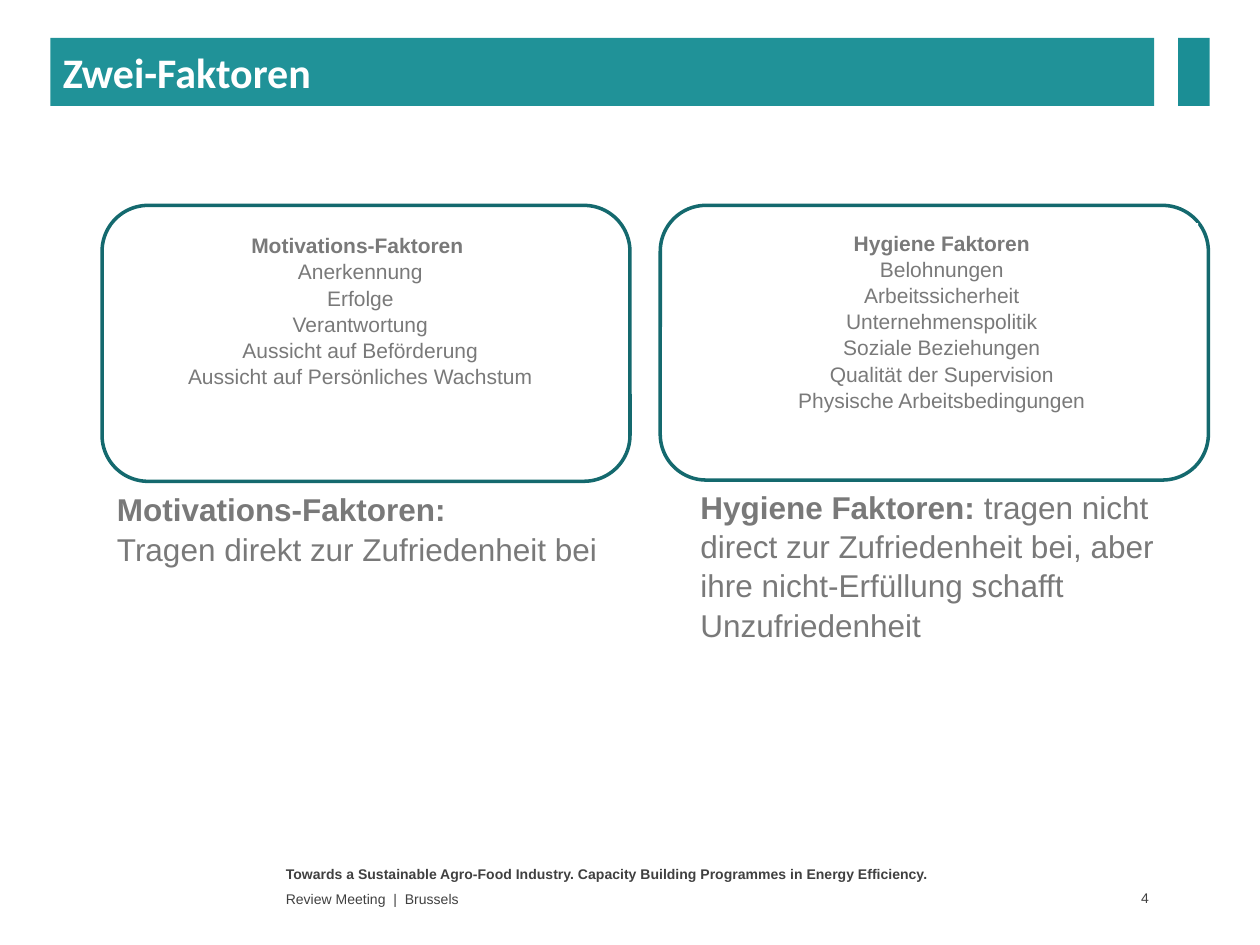
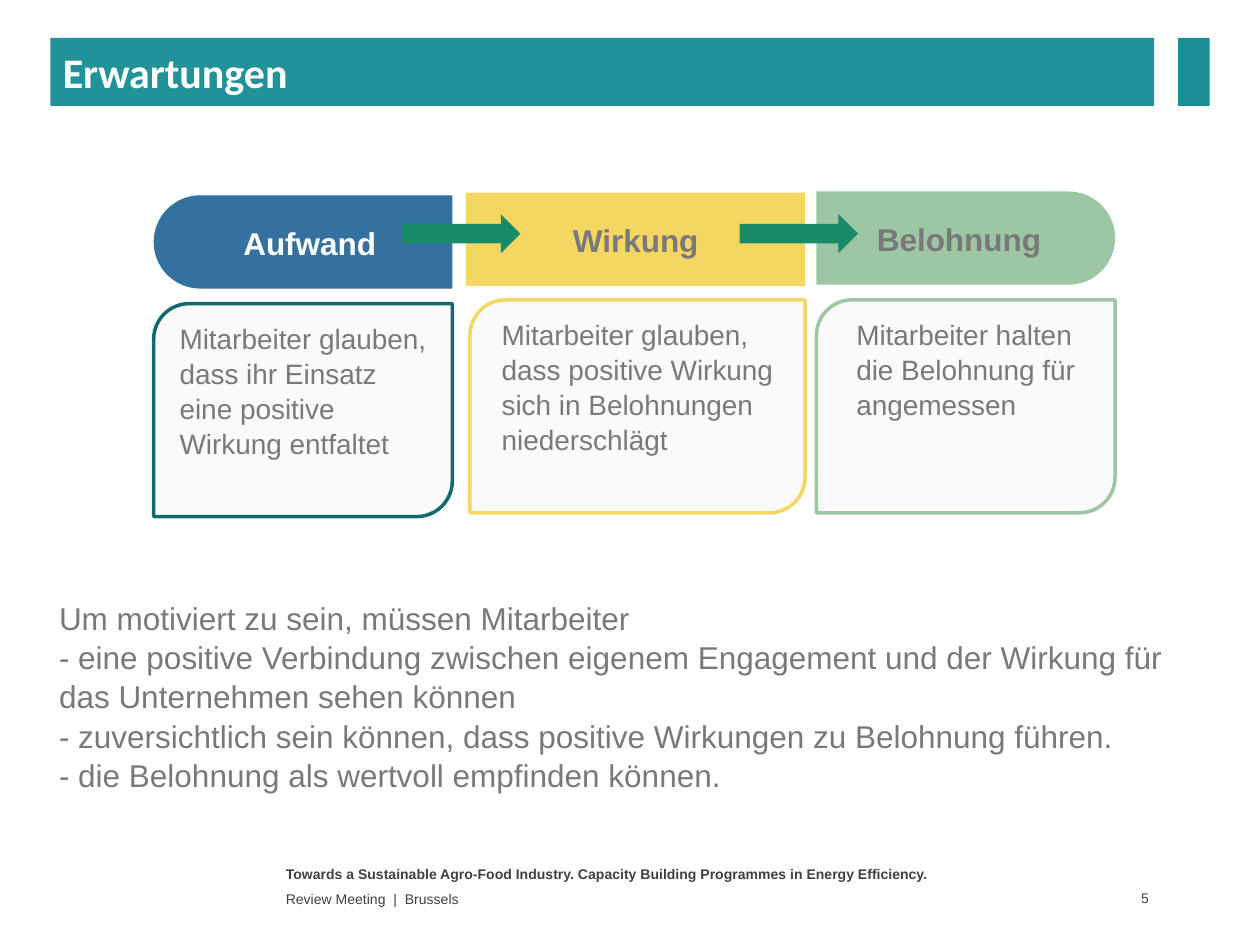
from pptx import Presentation
from pptx.dml.color import RGBColor
from pptx.enum import shapes, text
from pptx.util import Inches, Pt

# Shared look
TEAL, TEAL_MARK, TEAL_LINE = "209298", "1B8E95", "14696E"
BLUE, YELLOW, SAGE, GREEN = "34719E", "F4D762", "9DC6A5", "1A8B69"
WHITE, PALE, GREY, FOOTER_GREY = "FFFFFF", "FAFAFA", "797979", "404040"
KIND = shapes.MSO_SHAPE
LEFT, CENTER, RIGHT = text.PP_ALIGN.LEFT, text.PP_ALIGN.CENTER, text.PP_ALIGN.RIGHT
TOP, MIDDLE = text.MSO_ANCHOR.TOP, text.MSO_ANCHOR.MIDDLE
BODY_SPACING = 1.04

PROGRAMME = ("Towards a Sustainable Agro-Food Industry. "
             "Capacity Building Programmes in Energy Efficiency.")
MEETING = "Review Meeting  |  Brussels"
FIRST_PAGE = 4

# Slide 1: frame, list box and statement box per factor; statements hold (text, bold) runs
FACTORS = [
    dict(frame=(0.81, 1.63, 4.19, 2.19),
         list_box=(0.89, 1.79, 3.94, 1.31),
         items=["Motivations-Faktoren ", "Anerkennung", "Erfolge", "Verantwortung",
                "Aussicht auf Beförderung", "Aussicht auf Persönliches Wachstum"],
         statement_box=(0.83, 3.83, 4.21, 0.71),
         statement=[[("Motivations-Faktoren:", True)],
                    [("Tragen direkt zur Zufriedenheit bei", False)]]),
    dict(frame=(5.24, 1.63, 4.35, 2.18),
         list_box=(5.44, 1.77, 4.07, 1.51),
         items=["Hygiene Faktoren", "Belohnungen", "Arbeitssicherheit",
                "Unternehmenspolitik", "Soziale Beziehungen",
                "Qualität der Supervision", "Physische Arbeitsbedingungen"],
         statement_box=(5.46, 3.81, 4.15, 1.31),
         statement=[[("Hygiene Faktoren: ", True),
                     ("tragen nicht direct zur Zufriedenheit bei, aber ihre "
                      "nicht-Erfüllung schafft Unzufriedenheit", False)]]),
]

# Slide 2: heading, heading place, turn, fill, font colour; belief, its place, its line
STAGES = [
    ("Aufwand", (1.22, 1.55, 2.37, 0.74), 270, BLUE, WHITE,
     "Mitarbeiter glauben, dass ihr Einsatz eine positive Wirkung entfaltet",
     (1.22, 2.41, 2.37, 1.69), TEAL_LINE),
    ("Wirkung", (3.7, 1.53, 2.69, 0.74), 0, YELLOW, GREY,
     "Mitarbeiter glauben, dass positive Wirkung sich in Belohnungen niederschlägt",
     (3.73, 2.38, 2.66, 1.69), YELLOW),
    ("Belohnung", (6.48, 1.52, 2.37, 0.74), 90, SAGE, GREY,
     "Mitarbeiter halten die Belohnung für angemessen",
     (6.48, 2.38, 2.37, 1.69), SAGE),
]
ARROW_LEFTS = [3.19, 5.87]
CONDITIONS = [
    "Um motiviert zu sein, müssen Mitarbeiter",
    "- eine positive Verbindung zwischen eigenem Engagement und der Wirkung für "
    "das Unternehmen sehen können",
    "- zuversichtlich sein können, dass positive Wirkungen zu Belohnung führen.",
    "- die Belohnung als wertvoll empfinden können.",
]


def rgb(value):
    return RGBColor.from_string(value)


def add_shape(slide, kind, place, fill=None, line=None):
    shape = slide.shapes.add_shape(kind, *map(Inches, place))
    shape.shadow.inherit = False
    if fill:
        shape.fill.solid()
        shape.fill.fore_color.rgb = rgb(fill)
    else:
        shape.fill.background()
    if line:
        shape.line.color.rgb = rgb(line)
        shape.line.width = Pt(2)
    else:
        shape.line.fill.background()
    return shape


def write(shape, lines, size, color=GREY, bold=False, align=LEFT, anchor=TOP,
          font="Arial", spacing=1.0):
    """Each line is a string or a list of (text, bold) runs."""
    frame = shape.text_frame
    frame.word_wrap = True
    frame.vertical_anchor = anchor
    for index, line in enumerate(lines):
        paragraph = frame.paragraphs[0] if index == 0 else frame.add_paragraph()
        paragraph.alignment = align
        paragraph.line_spacing = spacing
        for words, strong in [(line, bold)] if isinstance(line, str) else line:
            run = paragraph.add_run()
            run.text = words
            run.font.bold = strong
        style = paragraph.font
        style.name, style.size = font, Pt(size)
        style.color.rgb = rgb(color)
    return frame


def add_text(slide, place, lines, size, **style):
    return write(slide.shapes.add_textbox(*map(Inches, place)), lines, size, **style)


def add_page(deck, title, number):
    slide = deck.slides.add_slide(deck.slide_layouts[6])
    # Footer
    add_text(slide, (2.17, 6.82, 5.5, 0.21), [PROGRAMME], 8, color=FOOTER_GREY, bold=True)
    add_text(slide, (2.17, 7.04, 5.5, 0.19), [MEETING], 8, color=FOOTER_GREY, anchor=MIDDLE)
    page = add_text(slide, (8.6, 7.03, 0.56, 0.2), [str(number)], 8,
                    color=FOOTER_GREY, align=RIGHT, anchor=MIDDLE)
    page.margin_right = Inches(0.04)
    # Title band and its end mark
    band = add_shape(slide, KIND.RECTANGLE, (0.4, 0.3, 8.76, 0.54), TEAL)
    heading = write(band, [title], 24, color=WHITE, bold=True, anchor=MIDDLE, font="Calibri")
    heading.paragraphs[0].space_after = Pt(9)
    add_shape(slide, KIND.RECTANGLE, (9.35, 0.3, 0.25, 0.54), TEAL_MARK)
    return slide


def add_stage_heading(slide, words, place, turn, fill, color):
    left, top, width, height = place
    if turn:
        # An upright tab turned about its centre, so that it fills the place
        shift = (width - height) / 2
        upright = (left + shift, top - shift, height, width)
        tab = add_shape(slide, KIND.ROUND_2_SAME_RECTANGLE, upright, fill)
        tab.adjustments[0], tab.adjustments[1] = 0.5, 0
        tab.rotation = turn
        # Turn the text back to horizontal
        tab.element.txBody.bodyPr.set("vert", "vert" if turn == 270 else "vert270")
    else:
        tab = add_shape(slide, KIND.RECTANGLE, place, fill)
    write(tab, [words], 18, color=color, bold=True, align=CENTER, anchor=MIDDLE,
          spacing=BODY_SPACING)


def build_factors(slide):
    for factor in FACTORS:
        add_shape(slide, KIND.ROUNDED_RECTANGLE, factor["frame"], line=TEAL_LINE)
        heading, *rest = factor["items"]
        listing = add_shape(slide, KIND.RECTANGLE, factor["list_box"], WHITE)
        write(listing, [[(heading, True)], *rest], 12, align=CENTER, spacing=BODY_SPACING)
        add_text(slide, factor["statement_box"], factor["statement"], 18,
                 spacing=BODY_SPACING)


def build_expectations(slide):
    add_text(slide, (0.37, 4.69, 9.11, 1.62), CONDITIONS, 18, spacing=BODY_SPACING)
    for words, place, turn, fill, color, belief, belief_place, line in STAGES:
        add_stage_heading(slide, words, place, turn, fill, color)
        card = add_shape(slide, KIND.ROUND_2_DIAG_RECTANGLE, belief_place, PALE, line)
        write(card, [belief], 16, spacing=BODY_SPACING)
        # Centre the left-aligned text block in the card
        card.element.txBody.bodyPr.set("anchorCtr", "1")
    for left in ARROW_LEFTS:
        add_shape(slide, KIND.RIGHT_ARROW, (left, 1.7, 0.94, 0.31), GREEN)


def main():
    deck = Presentation()
    deck.slide_width, deck.slide_height = Inches(10), Inches(7.5)
    pages = [("Zwei-Faktoren", build_factors), ("Erwartungen", build_expectations)]
    for number, (title, build) in enumerate(pages, FIRST_PAGE):
        build(add_page(deck, title, number))
    deck.save("out.pptx")


if __name__ == "__main__":
    main()
